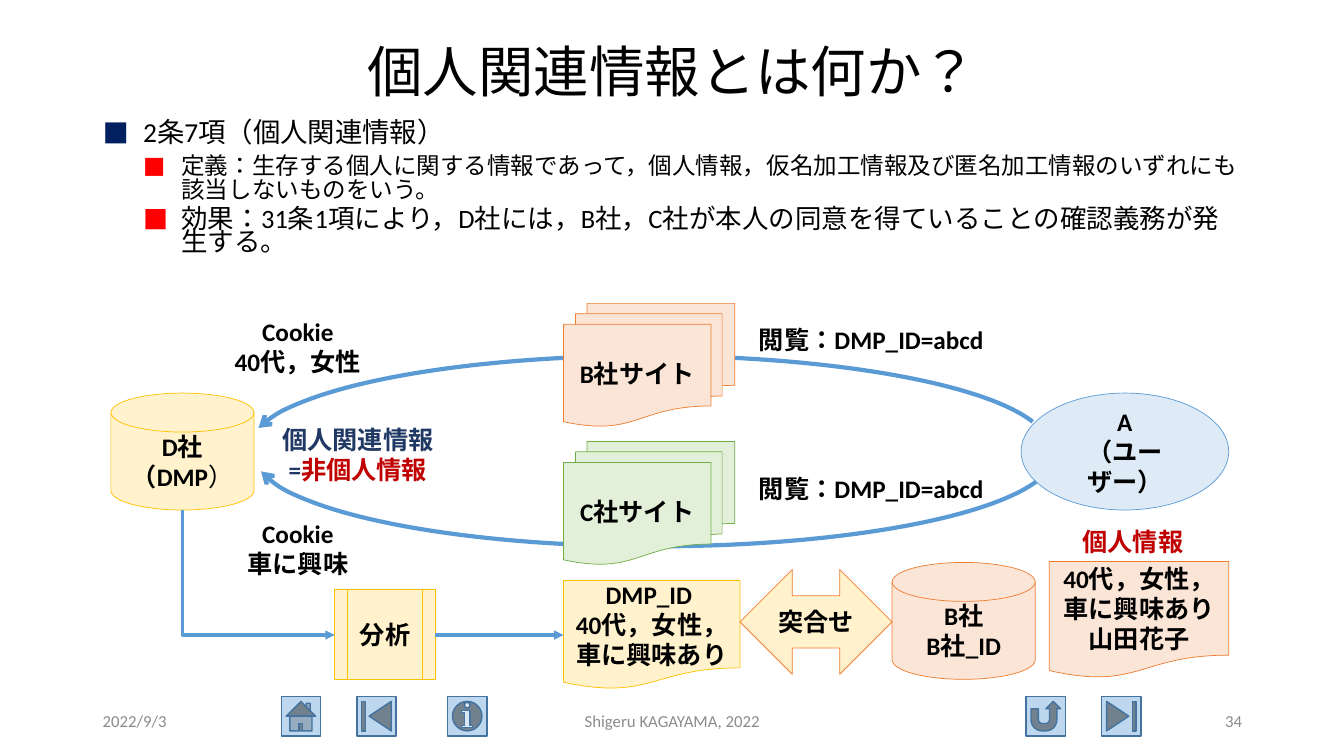
from dataclasses import dataclass

from lxml import etree
from pptx import Presentation
from pptx.dml.color import RGBColor
from pptx.enum.lang import MSO_LANGUAGE_ID
from pptx.enum.shapes import MSO_CONNECTOR, MSO_SHAPE
from pptx.enum.text import MSO_ANCHOR, MSO_AUTO_SIZE, PP_ALIGN
from pptx.oxml.ns import qn
from pptx.util import Emu, Inches, Pt

FONT = "Calibri"
CELL = Inches(0.1)
SLIDE_COLUMNS, SLIDE_ROWS = 133.33, 75
LEFT, CENTER, RIGHT = PP_ALIGN.LEFT, PP_ALIGN.CENTER, PP_ALIGN.RIGHT
TOP, MIDDLE = MSO_ANCHOR.TOP, MSO_ANCHOR.MIDDLE
STRAIGHT, ELBOW = MSO_CONNECTOR.STRAIGHT, MSO_CONNECTOR.ELBOW
DISK = MSO_SHAPE.FLOWCHART_MAGNETIC_DISK
SITES = MSO_SHAPE.FLOWCHART_MULTIDOCUMENT
DOCUMENT = MSO_SHAPE.FLOWCHART_DOCUMENT
PROCESS = MSO_SHAPE.FLOWCHART_PREDEFINED_PROCESS
OVAL, ARC, MATCH = MSO_SHAPE.OVAL, MSO_SHAPE.ARC, MSO_SHAPE.LEFT_RIGHT_ARROW
HOME, BACK = MSO_SHAPE.ACTION_BUTTON_HOME, MSO_SHAPE.ACTION_BUTTON_BEGINNING
INFO, RETURN = MSO_SHAPE.ACTION_BUTTON_INFORMATION, MSO_SHAPE.ACTION_BUTTON_RETURN
END = MSO_SHAPE.ACTION_BUTTON_END

BLACK, GREY, NAVY, CRIMSON = "000000", "8C8C8C", "203864", "C00000"
BLUE, GOLD, ORANGE, GREEN = "5B9BD5", "FFC000", "ED7D31", "70AD47"
CREAM, PEACH, MINT, SKY = "FFF2CC", "FBE5D6", "E2F0D9", "DEEBF7"
BUTTON_FILL, BUTTON_LINE = "BDD7EE", "43739E"


@dataclass(frozen=True)
class Area:
    column: float
    row: float
    columns: float
    rows: float

    def box(self) -> tuple[Emu, Emu, Emu, Emu]:
        return cells(self.column), cells(self.row), cells(self.columns), cells(self.rows)


@dataclass(frozen=True)
class Part:
    text: str
    color: str = BLACK
    bold: bool = True
    size: float = 18


@dataclass(frozen=True)
class Node:
    kind: MSO_SHAPE
    area: Area
    fill: str
    line: str
    paragraphs: tuple[tuple[Part, ...], ...] = ()
    weight: float = 0.5


@dataclass(frozen=True)
class Label:
    area: Area
    paragraphs: tuple[tuple[Part, ...], ...]
    align: PP_ALIGN = CENTER
    anchor: MSO_ANCHOR = TOP


@dataclass(frozen=True)
class Flow:
    area: Area
    angles: tuple[float, float]
    arrow_end: str
    rotation: float


@dataclass(frozen=True)
class Clause:
    text: str
    level: int
    size: float
    bullet_color: str
    indent: tuple[float, float]
    spacing: float
    before: float


def lines(*texts: str, color: str = BLACK) -> tuple[tuple[Part, ...], ...]:
    return tuple((Part(text, color),) for text in texts)


BUTTONS = [(HOME, 27.9), (BACK, 35.4), (RETURN, 101.8), (END, 109.3), (INFO, 44.4)]

CLAUSES = [
    Clause("2条7項（個人関連情報）", 0, 19.6, "002060", (4, -4), 0.75, 8),
    Clause("定義：生存する個人に関する情報であって，個人情報，仮名加工情報及び匿名加工情報"
           "のいずれにも該当しないものをいう。", 1, 16.8, "FF0000", (7.8, -3.8), 0.85, 5.5),
    Clause("効果：31条1項により，D社には，B社，C社が本人の同意を得ていることの確認義務"
           "が発生する。", 1, 18.9, "FF0000", (7.8, -3.8), 0.72, 5),
]

FLOWS = [
    Flow(Area(24.7, 35.3, 79.4, 18.3), (109.76, 213.65), "headEnd", 0),
    Flow(Area(25.2, 35.9, 79.4, 18.3), (110.47, 214.49), "tailEnd", 180),
]

USER = Node(OVAL, Area(101.3, 39, 20.6, 11.6), SKY, BLUE, lines("A", "（ユーザー）"))
NODES = [
    Node(DISK, Area(11, 39, 14.2, 11.6), CREAM, GOLD,
         ((Part("D社\n（DMP"), Part("）", bold=False)),)),
    Node(SITES, Area(55.9, 30.1, 17, 12.2), PEACH, ORANGE, lines("B社サイト")),
    Node(SITES, Area(55.9, 43.8, 17, 12.2), MINT, GREEN, lines("C社サイト")),
    Node(PROCESS, Area(33.2, 58.5, 10, 8.9), CREAM, GOLD, lines("分析")),
    Node(DISK, Area(88.5, 55.8, 14.2, 11.6), PEACH, ORANGE, lines("B社\nB社_ID")),
    Node(DOCUMENT, Area(55.9, 57.6, 17.5, 10.8), CREAM, GOLD,
         lines("DMP_ID \n40代，女性，\n車に興味あり")),
    Node(MATCH, Area(73.4, 56.5, 15.1, 10.4), CREAM, ORANGE, lines("突合せ")),
    Node(DOCUMENT, Area(104.1, 55.7, 17.8, 11.6), PEACH, ORANGE,
         lines("40代，女性，\n車に興味あり", "山田花子")),
]

LABELS = [
    Label(Area(21.9, 30.9, 15.3, 7.1), lines("Cookie", "40代，女性")),
    Label(Area(21.9, 50.9, 15.3, 7.1), lines("Cookie", "車に興味")),
    Label(Area(74.3, 31.7, 24.4, 4), lines("閲覧：DMP_ID=abcd"), LEFT),
    Label(Area(74.3, 46.5, 24.4, 4), lines("閲覧：DMP_ID=abcd"), LEFT),
    Label(Area(26.7, 41.6, 17.6, 7.1),
          ((Part("個人関連情報=", NAVY), Part("非個人情報", CRIMSON)),)),
    Label(Area(106.4, 51.7, 13.1, 4), lines("個人情報", color=CRIMSON), LEFT),
    Label(Area(9.2, 69.5, 30, 4), ((Part("2022/9/3", GREY, False, 12),),), LEFT, MIDDLE),
    Label(Area(44.2, 69.5, 45, 4),
          ((Part("Shigeru KAGAYAMA, 2022", GREY, False, 12),),), CENTER, MIDDLE),
    Label(Area(94.2, 69.5, 30, 4), ((Part("34", GREY, False, 12),),), RIGHT, MIDDLE),
]


def cells(count: float) -> Emu:
    return Emu(round(count * CELL))


def rgb(value: str) -> RGBColor:
    return RGBColor.from_string(value)


def add_part(paragraph, part: Part) -> None:
    for index, piece in enumerate(part.text.split("\n")):
        if index:
            paragraph.add_line_break()
        run = paragraph.add_run()
        run.text = piece
        run.font.name, run.font.size, run.font.bold = FONT, Pt(part.size), part.bold
        run.font.color.rgb = rgb(part.color)
        run.font.language_id = MSO_LANGUAGE_ID.JAPANESE


def write(frame, paragraphs, align: PP_ALIGN, anchor: MSO_ANCHOR) -> None:
    frame.word_wrap, frame.vertical_anchor = True, anchor
    for index, parts in enumerate(paragraphs):
        paragraph = frame.add_paragraph() if index else frame.paragraphs[0]
        paragraph.alignment = align
        for part in parts:
            add_part(paragraph, part)


def place(shape, area: Area) -> None:
    shape.left, shape.top, shape.width, shape.height = area.box()


def stroke(shape, color: str, weight: float) -> None:
    shape.line.color.rgb, shape.line.width = rgb(color), Pt(weight)


def add_arrow(shape, end: str, kind: str) -> None:
    outline = shape._element.spPr.find(qn("a:ln"))
    etree.SubElement(outline, qn(f"a:{end}")).set("type", kind)


def add_node(slide, node: Node) -> None:
    shape = slide.shapes.add_shape(node.kind, *node.area.box())
    shape.shadow.inherit = False
    shape.fill.solid()
    shape.fill.fore_color.rgb = rgb(node.fill)
    stroke(shape, node.line, node.weight)
    write(shape.text_frame, node.paragraphs, CENTER, MIDDLE)


def add_flow(slide, flow: Flow) -> None:
    arc = slide.shapes.add_shape(ARC, *flow.area.box())
    arc.shadow.inherit = False
    arc.adjustments[0], arc.adjustments[1] = flow.angles
    arc.rotation = flow.rotation
    arc.fill.background()
    stroke(arc, BLUE, 3)
    add_arrow(arc, flow.arrow_end, "arrow")


def add_link(slide, kind: MSO_CONNECTOR, start: tuple[float, float], stop: tuple[float, float]):
    ends = [cells(count) for count in (*start, *stop)]
    link = slide.shapes.add_connector(kind, *ends)
    stroke(link, BLUE, 2.25)
    add_arrow(link, "tailEnd", "triangle")
    etree.SubElement(link._element.spPr, qn("a:effectLst"))
    return link


def add_corner(slide, start: tuple[float, float], stop: tuple[float, float]) -> None:
    """Draw a link that runs down from start, then right to stop."""
    across, down = stop[0] - start[0], stop[1] - start[1]
    left = (start[0] + stop[0] - down) / 2
    top = (start[1] + stop[1] - across) / 2
    link = add_link(slide, ELBOW, (left, top), (left + down, top + across))
    properties = link._element.spPr
    properties.find(qn("a:prstGeom")).set("prst", "bentConnector2")
    properties.find(qn("a:xfrm")).set("rot", "16200000")
    properties.find(qn("a:xfrm")).set("flipH", "1")


def add_clause(paragraph, clause: Clause) -> None:
    paragraph.level, paragraph.alignment = clause.level, LEFT
    paragraph.line_spacing, paragraph.space_before = clause.spacing, Pt(clause.before)
    properties = paragraph._p.get_or_add_pPr()
    for name, count in zip(("marL", "indent"), clause.indent):
        properties.set(name, str(cells(count)))
    bullet_color = etree.SubElement(properties, qn("a:buClr"))
    etree.SubElement(bullet_color, qn("a:srgbClr")).set("val", clause.bullet_color)
    etree.SubElement(properties, qn("a:buFont")).set("typeface", FONT)
    etree.SubElement(properties, qn("a:buChar")).set("char", "■")
    add_part(paragraph, Part(clause.text, bold=False, size=clause.size))


def fill_placeholders(slide) -> None:
    title, body = slide.shapes.title, slide.placeholders[1]
    place(title, Area(9.2, 4, 115, 6.7))
    write(title.text_frame, ((Part("個人関連情報とは何か？", bold=False, size=39.6),),), CENTER, MIDDLE)
    title.text_frame.paragraphs[0].line_spacing = 0.9
    place(body, Area(9.2, 11.7, 115, 15.6))
    for placeholder in (title, body):
        placeholder.text_frame.auto_size = MSO_AUTO_SIZE.NONE
    for index, clause in enumerate(CLAUSES):
        frame = body.text_frame
        add_clause(frame.add_paragraph() if index else frame.paragraphs[0], clause)


def main() -> None:
    deck = Presentation()
    deck.slide_width, deck.slide_height = cells(SLIDE_COLUMNS), cells(SLIDE_ROWS)
    slide = deck.slides.add_slide(deck.slide_layouts[1])
    fill_placeholders(slide)
    for kind, column in BUTTONS:
        add_node(slide, Node(kind, Area(column, 69.1, 3.9, 3.9), BUTTON_FILL, BUTTON_LINE, weight=1))
    add_node(slide, USER)
    for flow in FLOWS:
        add_flow(slide, flow)
    for node in NODES:
        add_node(slide, node)
    add_corner(slide, (18.1, 50.6), (33.2, 63))
    add_link(slide, STRAIGHT, (43.2, 63), (55.9, 63))
    for label in LABELS:
        box = slide.shapes.add_textbox(*label.area.box())
        write(box.text_frame, label.paragraphs, label.align, label.anchor)
    deck.save("out.pptx")


if __name__ == "__main__":
    main()
